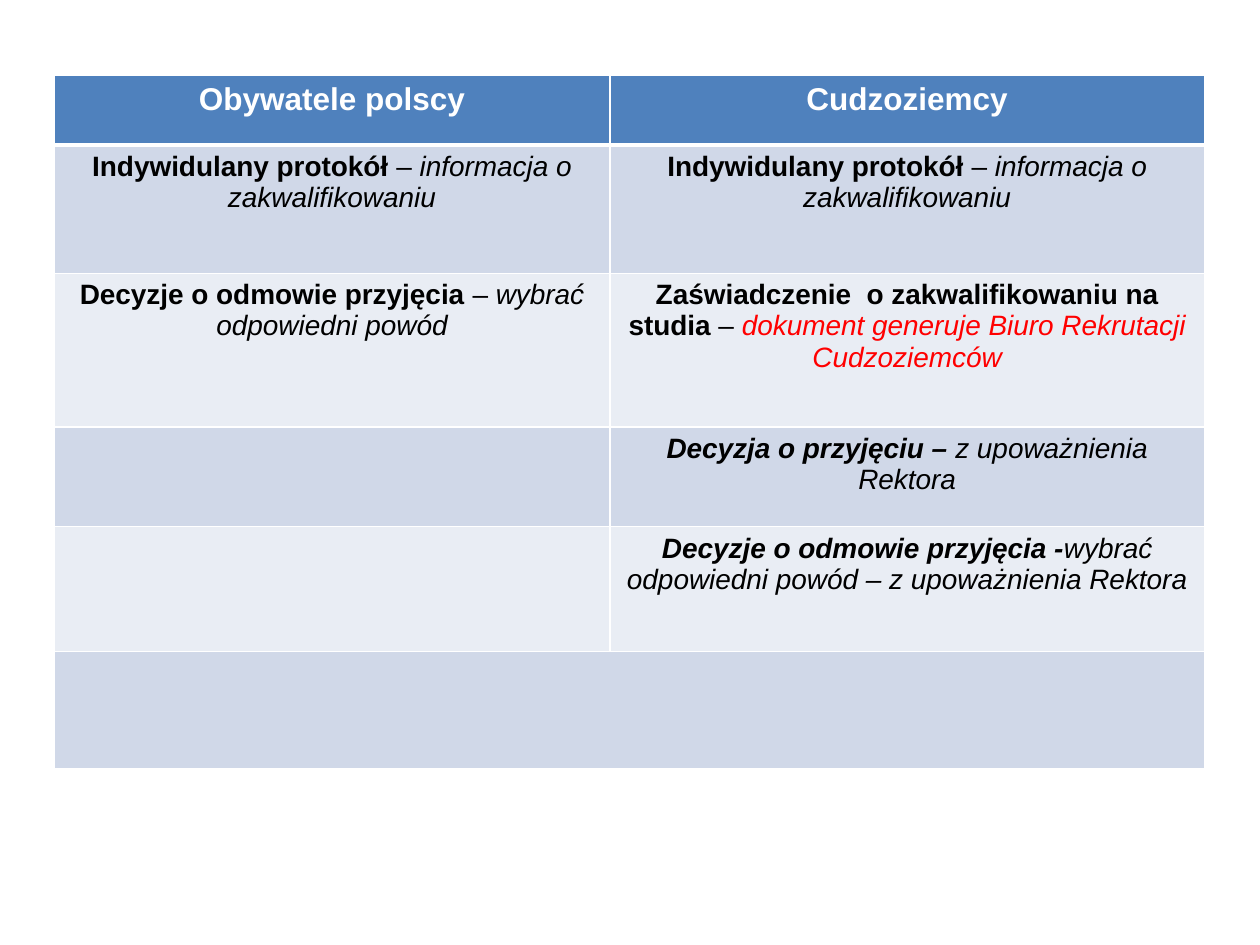
from lxml.etree import SubElement
from pptx import Presentation
from pptx.dml.color import RGBColor
from pptx.enum.text import PP_ALIGN
from pptx.oxml.ns import qn
from pptx.util import Inches, Pt

COLORS = {
    "header": "4F81BD",
    "band_dark": "D0D8E8",
    "band_light": "E9EDF4",
    "white": "FFFFFF",
    "black": "000000",
    "red": "FF0000",
}
FONT = "Arial"
COLUMN_WIDTHS = [4.41, 4.72]
ROW_HEIGHTS = [0.55, 1.02, 1.22, 0.79, 0.99, 0.93]

HEADINGS = ["Obywatele polscy", "Cudzoziemcy"]

# Each run is (text, style); style letters: b = bold, i = italic, r = red
PROTOCOL = [("Indywidulany protokół ", "b"), ("– ", ""),
            ("informacja o zakwalifikowaniu", "i")]
REFUSAL = [("Decyzje o odmowie przyjęcia ", "b"), ("– ", ""),
           ("wybrać odpowiedni powód", "i")]
CERTIFICATE = [("Zaświadczenie  o zakwalifikowaniu na studia ", "b"), ("– ", ""),
               ("dokument generuje Biuro Rekrutacji Cudzoziemców", "ir")]
ADMISSION = [("Decyzja o przyjęciu – ", "bi"), ("z upoważnienia Rektora", "i")]
FOREIGN_REFUSAL = [("Decyzje o odmowie przyjęcia -", "bi"),
                   ("wybrać odpowiedni powód – z upoważnienia Rektora", "i")]
DOCUMENTS = [
    [PROTOCOL, PROTOCOL],
    [REFUSAL, CERTIFICATE],
    [[], ADMISSION],
    [[], FOREIGN_REFUSAL],
    [[], []],
]


def rgb(name):
    return RGBColor.from_string(COLORS[name])


def set_borders(cell, top=1, bottom=1):
    """Draw white borders, widths in points."""
    properties = cell._tc.get_or_add_tcPr()
    for side, width in (("L", 1), ("R", 1), ("T", top), ("B", bottom)):
        line = SubElement(properties, qn(f"a:ln{side}"), w=str(Pt(width)))
        fill = SubElement(line, qn("a:solidFill"))
        SubElement(fill, qn("a:srgbClr"), val=COLORS["white"])


def style_cell(cell, fill, **borders):
    set_borders(cell, **borders)
    cell.fill.solid()
    cell.fill.fore_color.rgb = rgb(fill)


def write_heading(cell, text):
    paragraph = cell.text_frame.paragraphs[0]
    paragraph.text = text
    paragraph.alignment = PP_ALIGN.CENTER
    font = paragraph.font
    font.name, font.size, font.bold = FONT, Pt(18), True
    font.color.rgb = rgb("white")


def write_document(cell, runs):
    paragraph = cell.text_frame.paragraphs[0]
    paragraph.alignment = PP_ALIGN.CENTER
    paragraph.font.name, paragraph.font.size = FONT, Pt(16)
    for text, style in runs:
        run = paragraph.add_run()
        run.text = text
        font = run.font
        font.name, font.size = FONT, Pt(16)
        font.bold, font.italic = "b" in style, "i" in style
        font.color.rgb = rgb("red" if "r" in style else "black")


def add_documents_table(slide):
    table = slide.shapes.add_table(
        len(ROW_HEIGHTS), len(COLUMN_WIDTHS), Inches(0.43), Inches(0.6),
        Inches(sum(COLUMN_WIDTHS)), Inches(sum(ROW_HEIGHTS))).table
    for column, width in zip(table.columns, COLUMN_WIDTHS):
        column.width = Inches(width)
    for row, height in zip(table.rows, ROW_HEIGHTS):
        row.height = Inches(height)

    # Header row with a thicker rule below
    for col, heading in enumerate(HEADINGS):
        cell = table.cell(0, col)
        style_cell(cell, "header", bottom=3)
        write_heading(cell, heading)

    # Banded document rows
    for row, documents in enumerate(DOCUMENTS, start=1):
        band = "band_dark" if row % 2 else "band_light"
        for col, runs in enumerate(documents):
            cell = table.cell(row, col)
            style_cell(cell, band, top=3 if row == 1 else 1)
            if runs:
                write_document(cell, runs)

    # Closing row spans both columns
    last = len(ROW_HEIGHTS) - 1
    table.cell(last, 0).merge(table.cell(last, 1))


def main():
    presentation = Presentation()
    presentation.slide_width = Inches(10)
    presentation.slide_height = Inches(7.5)
    slide = presentation.slides.add_slide(presentation.slide_layouts[6])
    add_documents_table(slide)
    presentation.save("out.pptx")


if __name__ == "__main__":
    main()
